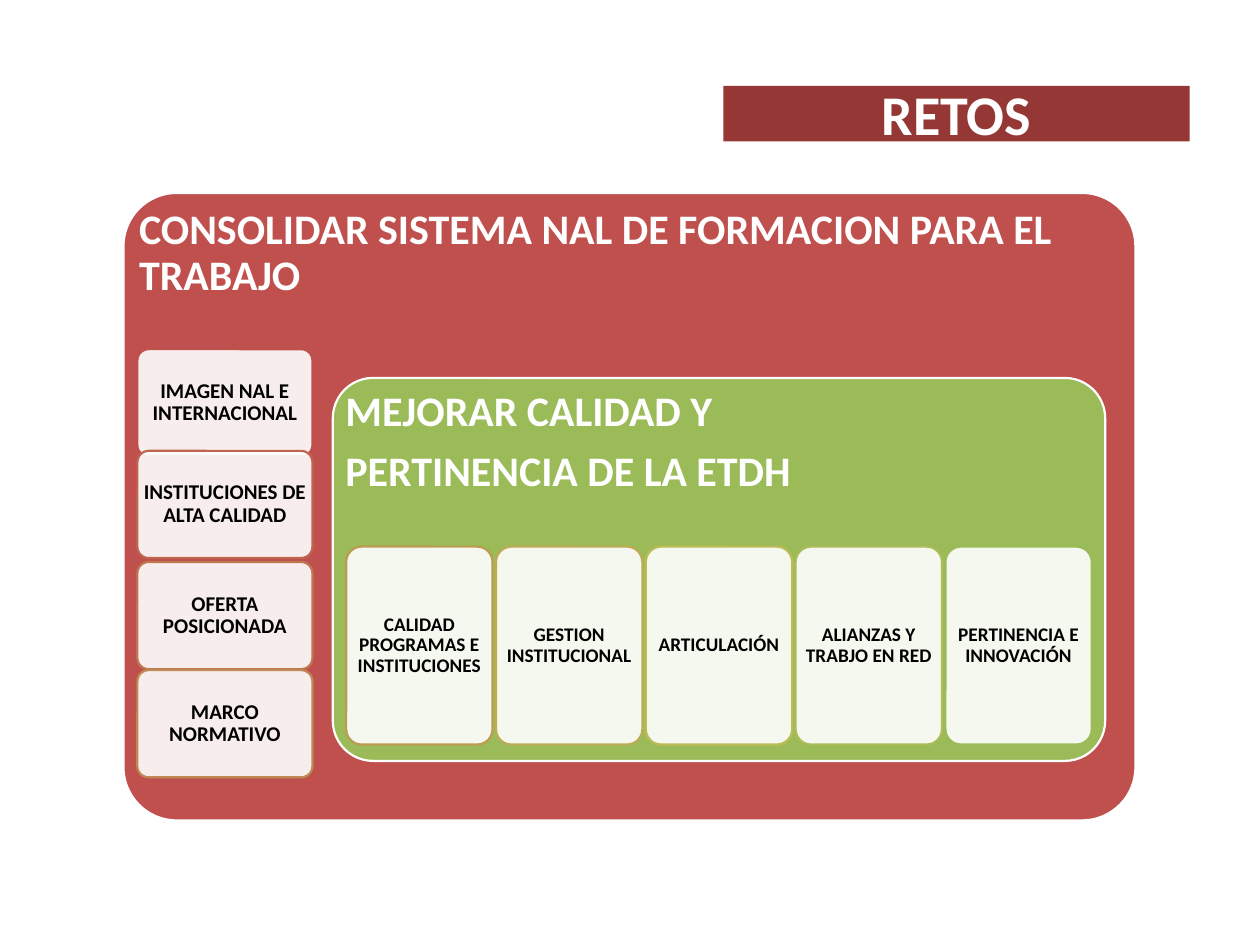
from lxml import etree
from pptx import Presentation
from pptx.dml.color import RGBColor
from pptx.enum.shapes import MSO_SHAPE
from pptx.enum.text import MSO_ANCHOR, MSO_AUTO_SIZE, PP_ALIGN
from pptx.oxml.ns import qn
from pptx.util import Cm, Pt

ROUNDED = MSO_SHAPE.ROUNDED_RECTANGLE
TOP, MIDDLE = MSO_ANCHOR.TOP, MSO_ANCHOR.MIDDLE
LEFT, CENTER = PP_ALIGN.LEFT, PP_ALIGN.CENTER
NO_AUTOFIT = MSO_AUTO_SIZE.NONE

WHITE = RGBColor(0xFF, 0xFF, 0xFF)
BLACK = RGBColor(0x00, 0x00, 0x00)
MAROON = RGBColor(0x95, 0x37, 0x35)
RED = RGBColor(0xC0, 0x50, 0x4D)
GREEN = RGBColor(0x9B, 0xBB, 0x59)

CORNER_INSET = 0.29

HEADING = {"size": Pt(24), "color": WHITE, "align": LEFT, "anchor": TOP, "pad": 0.25}
ROW_CARD = {"size": Pt(12), "color": BLACK, "align": CENTER, "anchor": MIDDLE, "pad": 0.13}
COLUMN_CARD = {**ROW_CARD, "size": Pt(11)}

ROWS = [
    ("IMAGEN NAL E INTERNACIONAL", 7.04, RED),
    ("INSTITUCIONES DE ALTA CALIDAD", 9.09, RGBColor(0xBF, 0x64, 0x4F)),
    ("OFERTA POSICIONADA", 11.33, RGBColor(0xBF, 0x77, 0x50)),
    ("MARCO NORMATIVO", 13.51, RGBColor(0xBE, 0x89, 0x52)),
]
COLUMNS = [
    ("CALIDAD PROGRAMAS E INSTITUCIONES", RGBColor(0xBD, 0x9B, 0x53)),
    ("GESTION INSTITUCIONAL", RGBColor(0xBD, 0xAC, 0x55)),
    ("ARTICULACIÓN", RGBColor(0xBC, 0xBC, 0x56)),
    ("ALIANZAS Y TRABJO EN RED", RGBColor(0xAB, 0xBC, 0x58)),
    ("PERTINENCIA E INNOVACIÓN", GREEN),
]


def apply(obj, values):
    """Set each attribute of an object from a dict."""
    for name, value in values.items():
        setattr(obj, name, value)


def format_paragraph(p, size, color, align):
    """Give a paragraph its bold Calibri format and alignment."""
    p.alignment = align
    apply(p.font, {"name": "Calibri", "size": size, "bold": True})
    p.font.color.rgb = color


def fill_shape(sp, color, alpha=None):
    """Fill a shape with a colour, optionally with an opacity in percent."""
    sp.fill.solid()
    sp.fill.fore_color.rgb = color
    if alpha:
        clr = sp.fill._xPr.find(qn("a:solidFill"))[0]
        etree.SubElement(clr, qn("a:alpha")).set("val", str(alpha * 1000))


def add_title(s, text):
    """Turn the title placeholder into the maroon banner."""
    sp = s.shapes.title
    apply(sp, {"left": Cm(14.58), "top": Cm(1.73), "width": Cm(9.4), "height": Cm(1.12)})
    fill_shape(sp, MAROON)
    tf = sp.text_frame
    tf.text = text
    apply(tf, {"auto_size": NO_AUTOFIT, "word_wrap": True, "vertical_anchor": MIDDLE})
    format_paragraph(tf.paragraphs[0], Pt(32), WHITE, CENTER)


def add_box(s, box, lines, style, fill, line, corner=0.105, alpha=None):
    """Add a rounded box whose text keeps an even distance from the edges."""
    sp = s.shapes.add_shape(ROUNDED, *(Cm(v) for v in box))
    sp.shadow.inherit = False
    sp.adjustments[0] = corner
    fill_shape(sp, fill, alpha)
    sp.line.color.rgb = line
    sp.line.width = Pt(1.25)
    tf = sp.text_frame
    inset = Cm(max(0, style["pad"] - CORNER_INSET * corner * min(box[2:])))
    apply(tf, {f"margin_{side}": inset for side in ("left", "top", "right", "bottom")})
    apply(tf, {"word_wrap": True, "vertical_anchor": style["anchor"]})
    tf.text = "\n".join(lines)
    for p in tf.paragraphs:
        apply(p, {"line_spacing": 0.9, "space_after": Pt(style["size"].pt * 0.35)})
        format_paragraph(p, style["size"], style["color"], style["align"])


def main():
    """Build the slide of challenges and save it."""
    prs = Presentation()
    apply(prs, {"slide_width": Cm(25.4), "slide_height": Cm(19.05)})
    s = prs.slides.add_slide(prs.slide_layouts[5])
    add_title(s, "RETOS")
    add_box(s, (2.49, 3.89, 20.4, 12.65),
            ["CONSOLIDAR SISTEMA NAL DE FORMACION PARA EL TRABAJO"],
            HEADING, RED, WHITE, corner=0.085)
    for text, top, line in ROWS:
        add_box(s, (2.77, top, 3.53, 2.16), [text], ROW_CARD, WHITE, line, alpha=90)
    add_box(s, (6.71, 7.62, 15.57, 7.72),
            ["MEJORAR CALIDAD Y", "PERTINENCIA DE LA ETDH"], HEADING, GREEN, WHITE)
    for i, (text, line) in enumerate(COLUMNS):
        add_box(s, (6.98 + 3.02 * i, 11.02, 2.95, 3.99), [text], COLUMN_CARD, WHITE, line, alpha=90)
    prs.save("out.pptx")


if __name__ == "__main__":
    main()
